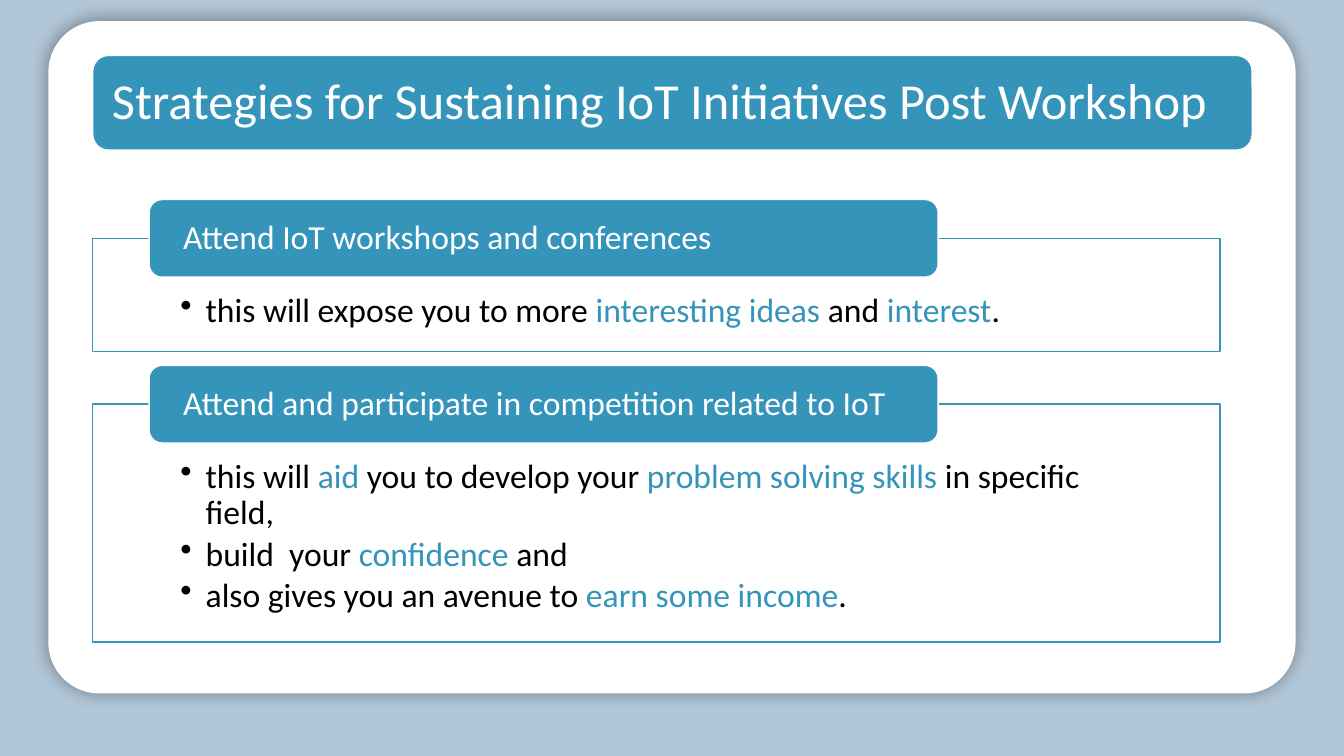
from lxml import etree
from pptx import Presentation
from pptx.dml.color import RGBColor
from pptx.enum.shapes import MSO_SHAPE as Shape
from pptx.enum.text import MSO_ANCHOR as Anchor, PP_ALIGN as Align
from pptx.oxml.ns import qn
from pptx.util import Inches, Pt

FONT = "Calibri"
ACCENT, WHITE, BLACK, BACKDROP = "3494BA", "FFFFFF", "000000", "B1C6D7"

TITLE = "Strategies for Sustaining IoT Initiatives Post Workshop"
# Each bullet alternates plain and highlighted segments.
SECTIONS = [
    ("Attend IoT workshops and conferences", 1.12, [
        ["this will expose you to more ", "interesting ideas ", "and ", "interest", "."],
    ]),
    ("Attend and participate in competition related to IoT", 2.36, [
        ["this will ", "aid", " you to develop your ", "problem solving skills ",
         "in specific field,"],
        ["build  your ", "confidence", " and"],
        ["also gives you an avenue to ", "earn some income", "."],
    ]),
]


def color(hex_string):
    return RGBColor.from_string(hex_string)


def add_box(slide, kind, left, top, width, height, fill, line=None):
    shape = slide.shapes.add_shape(
        kind, Inches(left), Inches(top), Inches(width), Inches(height))
    shape.shadow.inherit = False
    shape.fill.solid()
    shape.fill.fore_color.rgb = color(fill)
    if line:
        shape.line.color.rgb = color(line)
        shape.line.width = Pt(1)
    else:
        shape.line.fill.background()
    return shape


def set_frame(text_frame, anchor, left, top, right, bottom):
    text_frame.word_wrap = True
    text_frame.vertical_anchor = anchor
    text_frame.margin_left, text_frame.margin_right = Inches(left), Inches(right)
    text_frame.margin_top, text_frame.margin_bottom = Inches(top), Inches(bottom)


def format_paragraph(paragraph, space_after=0):
    paragraph.alignment = Align.LEFT
    paragraph.line_spacing = 0.9
    paragraph.space_before = Pt(0)
    paragraph.space_after = Pt(space_after)


def format_run(run, size, hex_string):
    run.font.name = FONT
    run.font.size = Pt(size)
    run.font.color.rgb = color(hex_string)


def add_bullet(paragraph, segments):
    format_paragraph(paragraph, space_after=3.6)
    properties = paragraph.runs and None or paragraph._p.get_or_add_pPr()
    properties.set("marL", str(Inches(0.25)))
    properties.set("indent", str(-Inches(0.25)))
    etree.SubElement(properties, qn("a:buChar"), char="•")
    for index, segment in enumerate(segments):
        run = paragraph.add_run()
        run.text = segment
        format_run(run, 24, ACCENT if index % 2 else BLACK)


def add_card(slide, left, top, width, height):
    """White rounded panel with a soft shadow on the coloured background."""
    slide.background.fill.solid()
    slide.background.fill.fore_color.rgb = color(BACKDROP)
    card = add_box(slide, Shape.ROUNDED_RECTANGLE, left, top, width, height, WHITE)
    card.adjustments[0] = 0.076
    effects = card.element.spPr.find(qn("a:effectLst"))
    shadow = etree.SubElement(effects, qn("a:outerShdw"),
                              blurRad=str(Pt(13)), dist="0", dir="0")
    shadow_color = etree.SubElement(shadow, qn("a:srgbClr"), val=BLACK)
    etree.SubElement(shadow_color, qn("a:alpha"), val="40000")


def add_title(slide, left, top, width, height):
    """Rounded banner with the title placeholder on top of it."""
    banner = add_box(slide, Shape.ROUNDED_RECTANGLE, left, top, width, height, ACCENT, WHITE)
    title = slide.shapes.title
    banner.element.addnext(title.element)
    title.left, title.top = Inches(left + 0.04), Inches(top + 0.04)
    title.width, title.height = Inches(width - 0.08), Inches(height - 0.08)
    title.text_frame.text = TITLE
    set_frame(title.text_frame, Anchor.MIDDLE, 0.15, 0.15, 0.15, 0.15)
    paragraph = title.text_frame.paragraphs[0]
    format_paragraph(paragraph)
    format_run(paragraph.runs[0], 36, WHITE)


def add_section(slide, left, top, width, frame_height, heading, bullets):
    """Outlined frame of bullets with a heading tab over its upper edge."""
    tab_height = 0.77
    frame = add_box(slide, Shape.RECTANGLE, left, top + tab_height / 2,
                    width, frame_height, WHITE, ACCENT)
    text_frame = frame.text_frame
    set_frame(text_frame, Anchor.TOP, 0.87, 0.55, 0.87, 0.19)
    for index, segments in enumerate(bullets):
        paragraph = text_frame.add_paragraph() if index else text_frame.paragraphs[0]
        add_bullet(paragraph, segments)

    # Heading tab
    tab = add_box(slide, Shape.ROUNDED_RECTANGLE, left + width * 0.05, top,
                  width * 0.7, tab_height, ACCENT, WHITE)
    tab.text_frame.text = heading
    set_frame(tab.text_frame, Anchor.MIDDLE, 0.3, 0, 0.3, 0)
    paragraph = tab.text_frame.paragraphs[0]
    format_paragraph(paragraph)
    format_run(paragraph.runs[0], 24, WHITE)
    return top + tab_height / 2 + frame_height


def main():
    presentation = Presentation()
    presentation.slide_width = Inches(13.33)
    presentation.slide_height = Inches(7.5)
    slide = presentation.slides.add_slide(presentation.slide_layouts.get_by_name("Title Only"))

    add_card(slide, 0.48, 0.21, 12.37, 6.67)
    add_title(slide, 0.92, 0.55, 11.5, 0.94)
    top = 1.98
    for heading, frame_height, bullets in SECTIONS:
        bottom = add_section(slide, 0.92, top, 11.18, frame_height, heading, bullets)
        top = bottom + 0.14

    presentation.save("out.pptx")


if __name__ == "__main__":
    main()
